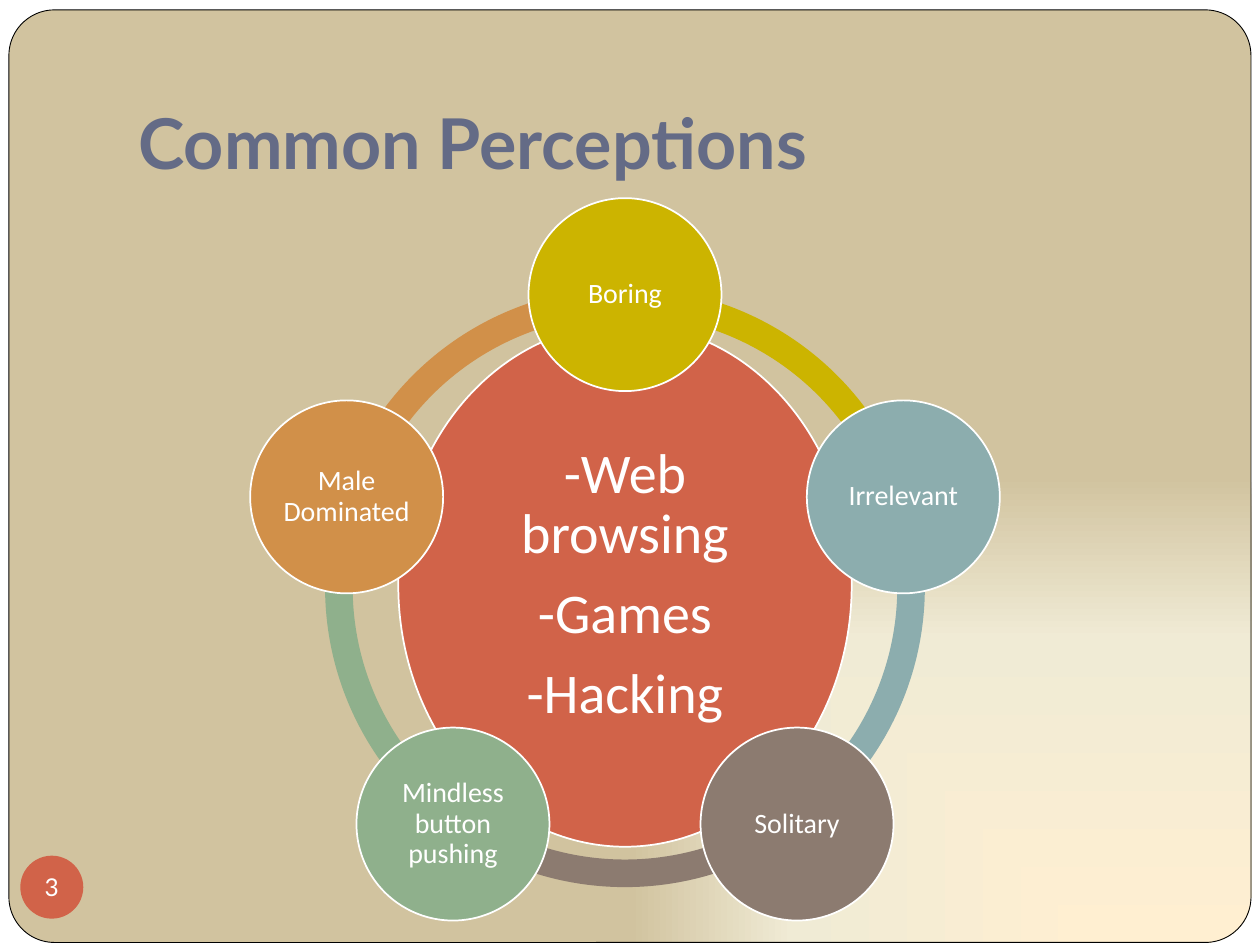
from dataclasses import dataclass
from math import cos, radians, sin
from typing import Any

from lxml import etree
from pptx import Presentation
from pptx import util as u
from pptx.dml import color
from pptx.enum import shapes, text
from pptx.oxml import ns

CENTRE_X, CENTRE_Y = 12.6, 11.84
ORBIT, NODE_SIZE, RING_SIZE = 5.9, 3.89, 12.09
RING_THICKNESS = 0.046
STEP = 72
WHITE = "FFFFFF"
FRAME_STOPS = ((0, "FFEFD1"), (65, "F0EBD5"), (100, "D1C39F"))


@dataclass(frozen=True)
class Node:
    label: str
    fill: str


@dataclass(frozen=True)
class Box:
    left: float
    top: float
    width: float
    height: float

    def lengths(self) -> tuple[u.Cm, ...]:
        return tuple(u.Cm(v) for v in (self.left, self.top, self.width, self.height))


NODES = [
    Node("Boring", "CCB400"),
    Node("Irrelevant", "8CADAE"),
    Node("Solitary", "8C7B70"),
    Node("Mindless button pushing", "8FB08C"),
    Node("Male Dominated", "D19049"),
]


def rgb(value: str) -> color.RGBColor:
    return color.RGBColor.from_string(value)


def apply(target: Any, values: dict[str, Any]) -> None:
    for name, value in values.items():
        setattr(target, name, value)


def centred(x: float, y: float, width: float, height: float) -> Box:
    return Box(x - width / 2, y - height / 2, width, height)


def add_figure(page: Any, kind: Any, box: Box, fill: str,
               line: str | None = None, weight: float = 1) -> Any:
    figure = page.shapes.add_shape(kind, *box.lengths())
    figure.shadow.inherit = False
    figure.fill.solid()
    figure.fill.fore_color.rgb = rgb(fill)
    if line:
        figure.line.color.rgb = rgb(line)
        figure.line.width = u.Pt(weight)
    else:
        figure.line.fill.background()
    return figure


def write(figure: Any, lines: list[str], size: float, font: str, inset: float,
          spacing: float = 1, wrap: bool = True) -> None:
    frame = figure.text_frame
    margins = {f"margin_{side}": u.Cm(inset) for side in ("left", "top", "right", "bottom")}
    apply(frame, {"word_wrap": wrap, "vertical_anchor": text.MSO_ANCHOR.MIDDLE, **margins})
    for index, line in enumerate(lines):
        para = frame.paragraphs[0] if index == 0 else frame.add_paragraph()
        apply(para, {"alignment": text.PP_ALIGN.CENTER, "line_spacing": spacing,
                     "space_after": u.Pt(size * 0.35)})
        span = para.add_run()
        span.text = line
        apply(span.font, {"size": u.Pt(size), "name": font})
        span.font.color.rgb = rgb(WHITE)


def add_backdrop(page: Any) -> None:
    apply(page.background.fill, {})
    page.background.fill.solid()
    page.background.fill.fore_color.rgb = rgb(WHITE)
    frame = add_figure(page, shapes.MSO_SHAPE.ROUNDED_RECTANGLE,
                       Box(0.18, 0.2, 25.04, 18.8), WHITE, "000000", 0.5)
    frame.adjustments[0] = 0.049
    stops = "".join(f'<a:gs pos="{place * 1000}"><a:srgbClr val="{value}"/></a:gs>'
                    for place, value in FRAME_STOPS)
    gradient = etree.fromstring(
        f'<a:gradFill {ns.nsdecls("a")} rotWithShape="1"><a:gsLst>{stops}</a:gsLst>'
        '<a:path path="rect"><a:fillToRect l="100000" t="100000"/></a:path></a:gradFill>')
    properties = frame._element.spPr
    properties.replace(properties.find(ns.qn("a:solidFill")), gradient)
    page.shapes._spTree.insert(2, frame._element)


def add_title(page: Any, words: str) -> None:
    title = page.shapes.title
    box = Box(2.54, 0.76, 21.59, 3.18)
    apply(title, dict(zip(("left", "top", "width", "height"), box.lengths())))
    title.text = words
    apply(title.text_frame, {
        "word_wrap": True, "auto_size": text.MSO_AUTO_SIZE.NONE,
        "vertical_anchor": text.MSO_ANCHOR.BOTTOM,
        "margin_left": u.Cm(0.25), "margin_right": u.Cm(0.25),
        "margin_top": u.Cm(0.13), "margin_bottom": u.Cm(0.25)})
    para = title.text_frame.paragraphs[0]
    para.alignment = text.PP_ALIGN.LEFT
    span = para.runs[0]
    apply(span.font, {"size": u.Pt(40), "name": "Lato", "bold": True})
    span.font.color.rgb = rgb("646B86")


def add_cycle(page: Any) -> None:
    angles = [(270 + STEP * index) % 360 for index in range(len(NODES))]
    ring = centred(CENTRE_X, CENTRE_Y, RING_SIZE, RING_SIZE)
    for node, angle in reversed(list(zip(NODES, angles))):
        arc = add_figure(page, shapes.MSO_SHAPE.BLOCK_ARC, ring, node.fill)
        limits = (angle * 0.6, (angle + STEP) % 360 * 0.6, RING_THICKNESS)
        for index, limit in enumerate(limits):
            arc.adjustments[index] = limit

    hub = add_figure(page, shapes.MSO_SHAPE.OVAL,
                     centred(CENTRE_X, 11.8, 9.14, 10.54), "D16349", WHITE)
    write(hub, ["-Web browsing", "-Games", "-Hacking"], 32, "Calibri", 0.1, 0.9)

    for node, angle in zip(NODES, angles):
        x = CENTRE_X + ORBIT * cos(radians(angle))
        y = CENTRE_Y + ORBIT * sin(radians(angle))
        circle = add_figure(page, shapes.MSO_SHAPE.OVAL,
                            centred(x, y, NODE_SIZE, NODE_SIZE), node.fill, WHITE)
        write(circle, [node.label], 16, "Calibri", 0.05, 0.9)


def main() -> None:
    deck = Presentation()
    apply(deck, {"slide_width": u.Cm(25.4), "slide_height": u.Cm(19.05)})
    page = deck.slides.add_slide(deck.slide_layouts[5])
    add_backdrop(page)
    add_title(page, "Common Perceptions")
    add_cycle(page)
    badge = add_figure(page, shapes.MSO_SHAPE.OVAL, Box(0.41, 17.25, 1.27, 1.27), "D16349")
    write(badge, ["3"], 14, "Lato", 0, wrap=False)
    deck.save("out.pptx")


if __name__ == "__main__":
    main()
